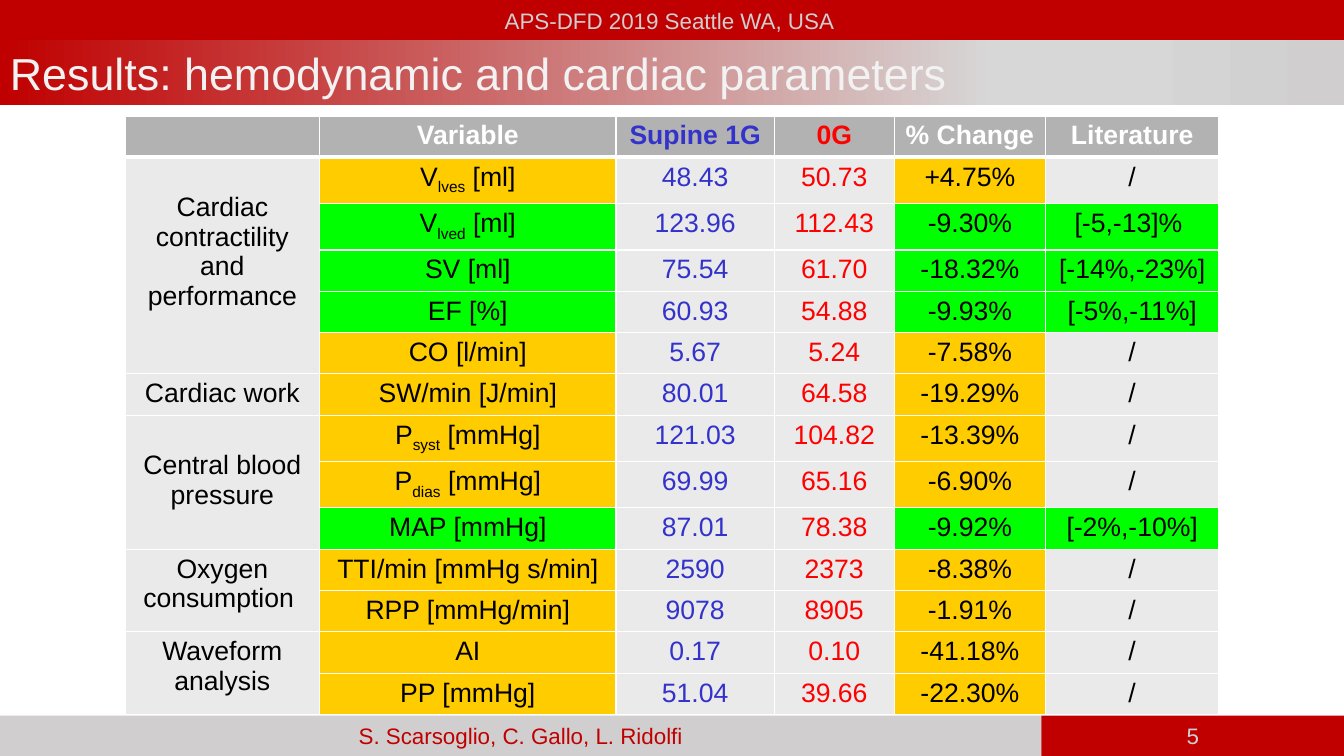
from lxml import etree
from pptx import Presentation
from pptx.dml.color import RGBColor as RGB
from pptx.enum.shapes import MSO_SHAPE as SHAPE
from pptx.enum.text import MSO_ANCHOR as ANCHOR, PP_ALIGN as ALIGN
from pptx.oxml.ns import qn
from pptx.util import Inches, Pt

COLORS = {
    "red": "C00000", "silver": "D0CECE", "pale": "D7D7D7", "off_white": "F2F2F2",
    "white": "FFFFFF", "black": "000000", "header": "B2B2B2", "plain": "EAEAEA",
    "amber": "FFCC00", "green": "00FF00", "supine": "3333CC", "zero_g": "FF0000",
}

W, H = 13.33, 7.5
BAR = 0.4
SPLIT = W - 3


def write(p, text, size, color, bold=False, align=ALIGN.CENTER):
    """Fill a paragraph; parts between underscores become subscripts."""
    p.alignment = align
    for i, part in enumerate(text.split("_")):
        r = p.add_run()
        r.text = part
        font = {"name": "Arial", "size": Pt(size), "bold": bold}
        for name, value in font.items():
            setattr(r.font, name, value)
        r.font.color.rgb = RGB.from_string(COLORS[color])
        if i % 2:
            r.font._element.set("baseline", "-25000")


def set_borders(cell, widths):
    """Draw white borders; widths maps the sides L, R, T, B to points."""
    tcPr = cell._tc.get_or_add_tcPr()
    for side, width in widths.items():
        ln = etree.SubElement(tcPr, qn(f"a:ln{side}"), w=str(Pt(width)))
        fill = etree.SubElement(ln, qn("a:solidFill"))
        etree.SubElement(fill, qn("a:srgbClr"), val=COLORS["white"])


prs = Presentation()
prs.slide_width, prs.slide_height = Inches(W), Inches(H)
s = prs.slides.add_slide(prs.slide_layouts[6])

# Bars: left, top, width, height, fill, text, size, colour, alignment, anchor
bars = [
    (0, 0, W, BAR, "red", "APS-DFD 2019 Seattle WA, USA ", 16, "silver", ALIGN.CENTER, ANCHOR.MIDDLE),
    (0, H - BAR, SPLIT, BAR, "silver", "S. Scarsoglio, C. Gallo, L. Ridolfi", 16, "red",
     ALIGN.CENTER, ANCHOR.MIDDLE),
    (SPLIT, H - BAR, W - SPLIT, BAR, "red", "5", 16, "silver", ALIGN.CENTER, ANCHOR.MIDDLE),
    (0, BAR, W, 0.64, "red", "Results: hemodynamic and cardiac parameters", 32, "off_white",
     ALIGN.LEFT, ANCHOR.TOP),
]
for x, y, w, h, fill, text, size, color, align, anchor in bars:
    sp = s.shapes.add_shape(SHAPE.RECTANGLE, Inches(x), Inches(y), Inches(w), Inches(h))
    sp.shadow.inherit = False
    sp.line.fill.background()
    sp.fill.solid()
    sp.fill.fore_color.rgb = RGB.from_string(COLORS[fill])
    tf = sp.text_frame
    tf.word_wrap = True
    tf.vertical_anchor = anchor
    write(tf.paragraphs[0], text, size, color, align=align)

# The title bar, last in the list, fades from red to silver
title = sp
title.fill.gradient()
title.fill.gradient_angle = 0
stops = title._element.spPr.find(qn("a:gradFill")).find(qn("a:gsLst"))
for stop in list(stops):
    stops.remove(stop)
for percent, color in [(0, "red"), (74, "pale"), (83, "pale"), (100, "silver")]:
    stop = etree.SubElement(stops, qn("a:gs"), pos=str(percent * 1000))
    etree.SubElement(stop, qn("a:srgbClr"), val=COLORS[color])

# Results table
headings = ["", "Variable", "Supine 1G", "0G", "% Change", "Literature"]
heading_colors = ["white", "white", "supine", "zero_g", "white", "white"]
body_colors = ["black", "black", "supine", "zero_g", "black", "black"]
col_widths = [1.93, 2.94, 1.57, 1.19, 1.5, 1.72]
# Group label, top margin of its cell, rows of the group
groups = [
    ("Cardiac contractility and performance", 0.35, [
        ("V_lves_ [ml]", "48.43", "50.73", "+4.75%", "/"),
        ("V_lved_ [ml]", "123.96", "112.43", "-9.30%", "[-5,-13]% "),
        ("SV [ml]", "75.54", "61.70", "-18.32%", "[-14%,-23%]"),
        ("EF [%]", "60.93", "54.88", "-9.93%", "[-5%,-11%]"),
        ("CO [l/min]", "5.67", "5.24", "-7.58%", "/")]),
    ("Cardiac work", 0.05, [
        ("SW/min [J/min]", "80.01", "64.58", "-19.29%", "/")]),
    ("Central blood pressure", 0.35, [
        ("P_syst_ [mmHg]", "121.03", "104.82", "-13.39%", "/"),
        ("P_dias_ [mmHg]", "69.99", "65.16", "-6.90%", "/"),
        ("MAP [mmHg]", "87.01", "78.38", "-9.92%", "[-2%,-10%]")]),
    ("Oxygen consumption ", 0.05, [
        ("TTI/min [mmHg s/min]", "2590", "2373", "-8.38%", "/"),
        ("RPP [mmHg/min]", "9078", "8905", "-1.91%", "/")]),
    ("Waveform\nanalysis", 0.05, [
        ("AI", "0.17", "0.10", "-41.18%", "/"),
        ("PP [mmHg]", "51.04", "39.66", "-22.30%", "/")]),
]
rows = [headings] + [("", *row) for _, _, members in groups for row in members]
row_heights = [0.46 if "_" in row[1] else 0.41 for row in rows]

table = s.shapes.add_table(len(rows), len(headings), Inches(1.24), Inches(1.15),
                           Inches(sum(col_widths)), Inches(sum(row_heights))).table
for col, width in zip(table.columns, col_widths):
    col.width = Inches(width)
for row, height in zip(table.rows, row_heights):
    row.height = Inches(height)

for i, values in enumerate(rows):
    is_header = i == 0
    # Green marks the changes that the literature confirms
    mark = "amber" if values[-1] == "/" else "green"
    literature = "plain" if values[-1] == "/" else "green"
    fills = ["header"] * 6 if is_header else ["plain", mark, "plain", "plain", mark, literature]
    colors = heading_colors if is_header else body_colors
    for j, text in enumerate(values):
        cell = table.cell(i, j)
        set_borders(cell, {"L": 1, "R": 1, "T": 3 if i == 1 else 1, "B": 3 if is_header else 1})
        cell.fill.solid()
        cell.fill.fore_color.rgb = RGB.from_string(COLORS[fills[j]])
        if text:
            write(cell.text_frame.paragraphs[0], text, 19, colors[j], bold=is_header)

first = 1
for label, margin, members in groups:
    cell = table.cell(first, 0)
    if len(members) > 1:
        cell.merge(table.cell(first + len(members) - 1, 0))
    cell.margin_top = Inches(margin)
    tf = cell.text_frame
    for k, line in enumerate(label.split("\n")):
        p = tf.add_paragraph() if k else tf.paragraphs[0]
        write(p, line, 19, "black")
    first += len(members)

prs.save("out.pptx")
